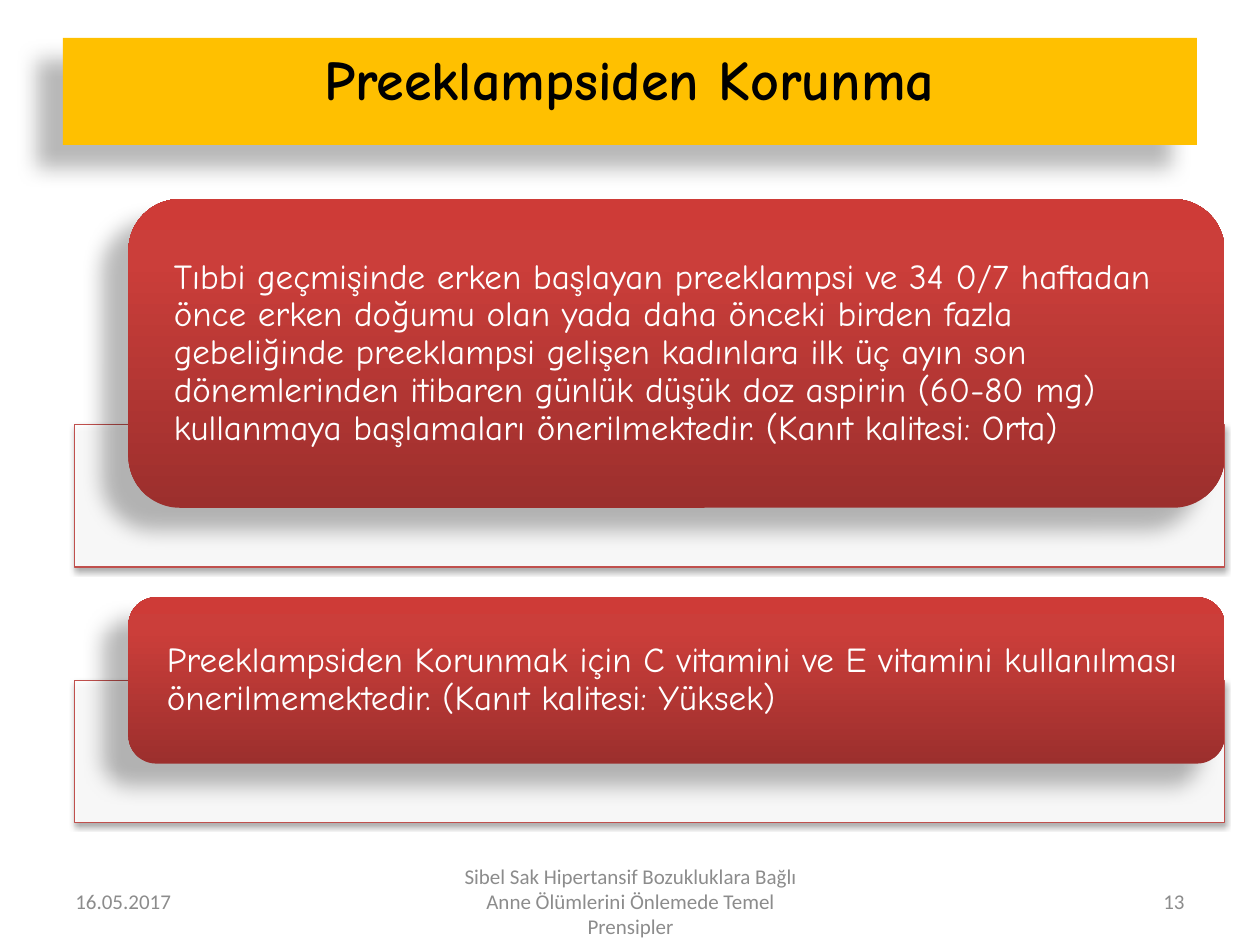
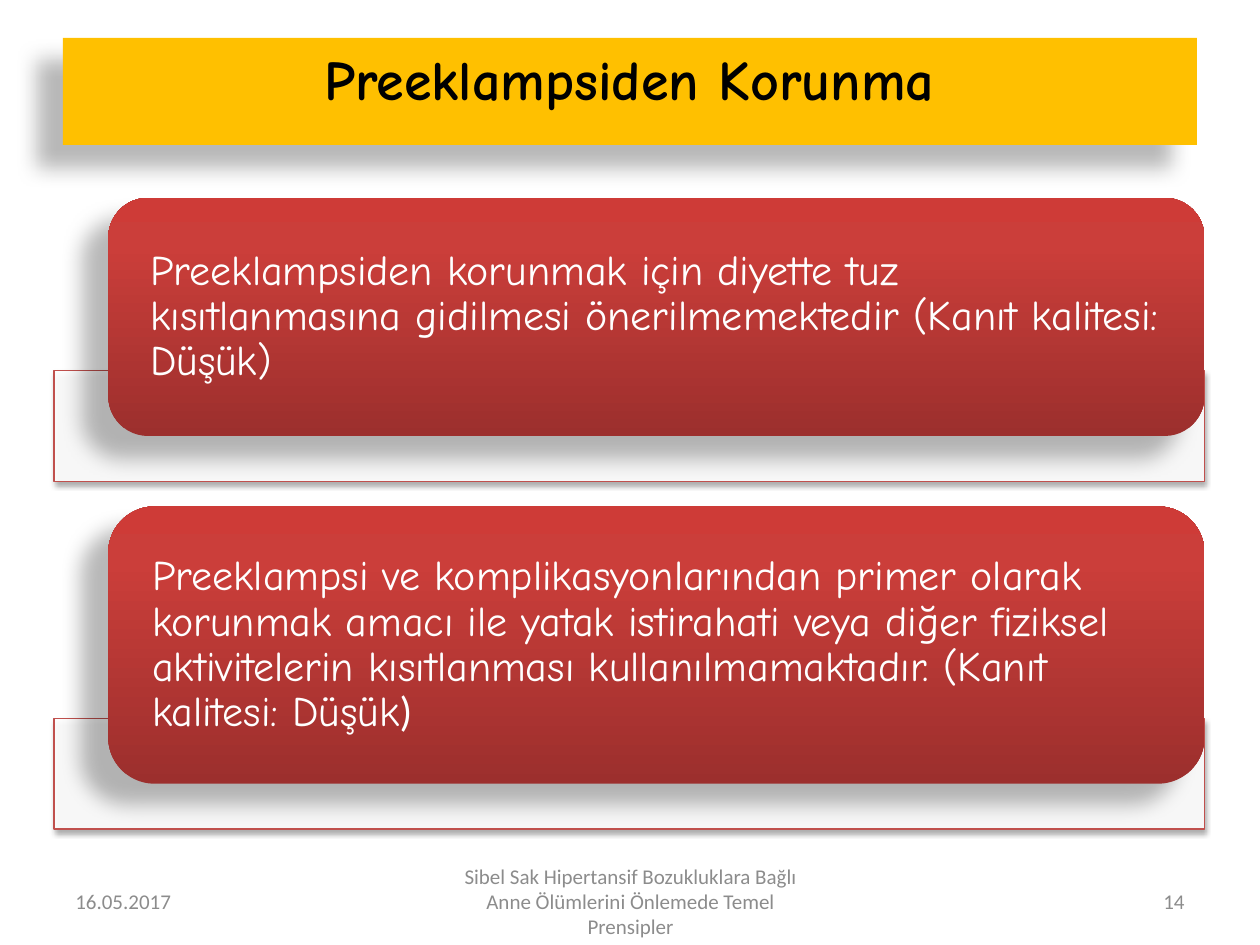
import copy
import dataclasses
import typing

import lxml.etree
import pptx
import pptx.dml.color
import pptx.enum.shapes
import pptx.enum.text
import pptx.oxml.ns
import pptx.util

Inches = pptx.util.Inches
qn = pptx.oxml.ns.qn
ALIGN = pptx.enum.text.PP_ALIGN
ANCHOR = pptx.enum.text.MSO_ANCHOR
FORM = pptx.enum.shapes.MSO_SHAPE

# Shared look
GOLD, BLACK, WHITE, GREY, RED = "FFC000", "000000", "FFFFFF", "8C8C8C", "C0504D"
REDS = ((0, "9C2F2D"), (0.8, "CB3E3A"), (1, "CE3B37"))
HAND, PLAIN = "Comic Neue", "Calibri"
TITLE = "Preeklampsiden Korunma"
DATE = "16.05.2017"
FOOTER = "Sibel Sak Hipertansif Bozukluklara Bağlı Anne Ölümlerini Önlemede Temel Prensipler"
PANEL_WIDTH, INDENT = 9.13, 0.43


@dataclasses.dataclass
class Shade:
    alpha: int
    blur: float
    dist: float
    angle: int


DEEP = Shade(28, 11.8, 19.7, 141)
SOFT = Shade(35, 3.1, 1.8, 90)


@dataclasses.dataclass
class Card:
    height: float
    text: str
    tail: str = ""  # closing text set in the plain font


@dataclasses.dataclass
class Page:
    number: int
    left: float
    top: float
    size: int
    panel: float  # panel height
    drop: float  # how far a panel reaches below its card
    gap: float
    cards: list[Card]


PAGES = [
    Page(13, 0.59, 1.58, 20, 1.13, 0.47, 0.24, [
        Card(2.45, "Tıbbi geçmişinde erken başlayan preeklampsi ve 34 0/7 haftadan önce erken "
                   "doğumu olan yada daha önceki birden fazla gebeliğinde preeklampsi gelişen "
                   "kadınlara ilk üç ayın son dönemlerinden itibaren günlük düşük doz aspirin "
                   "(60-80 mg) kullanmaya başlamaları önerilmektedir. (Kanıt kalitesi: Orta)"),
        Card(1.32, "Preeklampsiden Korunmak için C vitamini ve E vitamini kullanılması "
                   "önerilmemektedir. (Kanıt kalitesi: Yüksek)"),
    ]),
    Page(14, 0.43, 1.57, 24, 0.88, 0.36, 0.2, [
        Card(1.89, "Preeklampsiden korunmak için diyette tuz kısıtlanmasına gidilmesi "
                   "önerilmemektedir (Kanıt kalitesi: Düşük)"),
        Card(2.2, "Preeklampsi ve komplikasyonlarından primer olarak korunmak amacı ile yatak "
                  "istirahati veya diğer fiziksel aktivitelerin kısıtlanması "
                  "kullanılmamaktadır. (Kanıt kalitesi: Düşük", ")"),
    ]),
]


def tint(code: str) -> pptx.dml.color.RGBColor:
    return pptx.dml.color.RGBColor.from_string(code)


def say(shape: typing.Any, text: str, *, size: int, color: str, font: str = PLAIN,
        bold: bool = False, align: typing.Any = ALIGN.LEFT, anchor: typing.Any = ANCHOR.MIDDLE,
        pad: typing.Optional[float] = None, space: float = 1.0, tail: str = "") -> None:
    """Write one formatted paragraph into a shape."""
    frame = shape.text_frame
    frame.word_wrap = True
    frame.vertical_anchor = anchor
    if pad is not None:
        frame.margin_left = frame.margin_right = Inches(pad)
        frame.margin_top = frame.margin_bottom = 0
    para = frame.paragraphs[0]
    para.alignment = align
    para.line_spacing = space
    for part, face in ((text, font), (tail, PLAIN)):
        if part:
            run = para.add_run()
            run.text = part
            run.font.name = face
            run.font.size = pptx.util.Pt(size)
            run.font.bold = bold
            run.font.color.rgb = tint(color)


def cast(shape: typing.Any, shade: Shade) -> None:
    """Give a shape an outer shadow."""
    shape.shadow.inherit = False
    effects = shape._element.spPr.find(qn("a:effectLst"))
    outer = lxml.etree.SubElement(
        effects, qn("a:outerShdw"), blurRad=str(pptx.util.Pt(shade.blur)),
        dist=str(pptx.util.Pt(shade.dist)), dir=str(shade.angle * 60000), rotWithShape="0")
    color = lxml.etree.SubElement(outer, qn("a:srgbClr"), val=BLACK)
    lxml.etree.SubElement(color, qn("a:alpha"), val=str(shade.alpha * 1000))


def block(slide: typing.Any, form: typing.Any, left: float, top: float, width: float,
          height: float, fill: str, shade: Shade) -> typing.Any:
    """Add a filled shape with a shadow and no outline."""
    shape = slide.shapes.add_shape(
        form, Inches(left), Inches(top), Inches(width), Inches(height))
    shape.fill.solid()
    shape.fill.fore_color.rgb = tint(fill)
    shape.line.fill.background()
    cast(shape, shade)
    return shape


def blend(shape: typing.Any) -> None:
    """Fill a shape with the red gradient, dark at the bottom."""
    shape.fill.gradient()
    shape.fill.gradient_angle = 90
    stops = shape._element.spPr.find(qn("a:gradFill")).find(qn("a:gsLst"))
    stops.append(copy.deepcopy(stops[-1]))
    for stop, (place, code) in zip(shape.fill.gradient_stops, REDS):
        stop.position = place
        stop.color.rgb = tint(code)


def frame_page(slide: typing.Any, number: int) -> None:
    """Add the footer line and the title band."""
    for left, width, text, align in (
            (0.5, 2.33, DATE, ALIGN.LEFT),
            (3.42, 3.17, FOOTER, ALIGN.CENTER),
            (7.17, 2.33, str(number), ALIGN.RIGHT)):
        box = slide.shapes.add_textbox(Inches(left), Inches(6.95), Inches(width), Inches(0.4))
        say(box, text, size=12, color=GREY, align=align)
    band = block(slide, FORM.RECTANGLE, 0.5, 0.3, 9, 0.85, GOLD, DEEP)
    say(band, TITLE, size=32, color=BLACK, font=HAND, bold=True,
        align=ALIGN.CENTER, anchor=ANCHOR.TOP)


def stack(slide: typing.Any, page: Page) -> None:
    """Stack the cards, each over the panel behind its foot."""
    top = page.top
    for card in page.cards:
        base = top + card.height + page.drop
        panel = block(slide, FORM.RECTANGLE, page.left, base - page.panel,
                      PANEL_WIDTH, page.panel, WHITE, SOFT)
        color = panel._element.spPr.find(qn("a:solidFill"))[0]
        lxml.etree.SubElement(color, qn("a:alpha"), val="90000")
        panel.line.color.rgb = tint(RED)
        panel.line.width = pptx.util.Pt(0.75)

        front = block(slide, FORM.ROUNDED_RECTANGLE, page.left + INDENT, top,
                      PANEL_WIDTH - INDENT, card.height, RED, DEEP)
        blend(front)
        say(front, card.text, size=page.size, color=WHITE, font=HAND,
            pad=0.24, space=0.9, tail=card.tail)
        top = base + page.gap


def main() -> None:
    deck = pptx.Presentation()
    deck.slide_width, deck.slide_height = Inches(10), Inches(7.5)
    for page in PAGES:
        slide = deck.slides.add_slide(deck.slide_layouts[6])
        frame_page(slide, page.number)
        stack(slide, page)
    deck.save("out.pptx")


if __name__ == "__main__":
    main()
